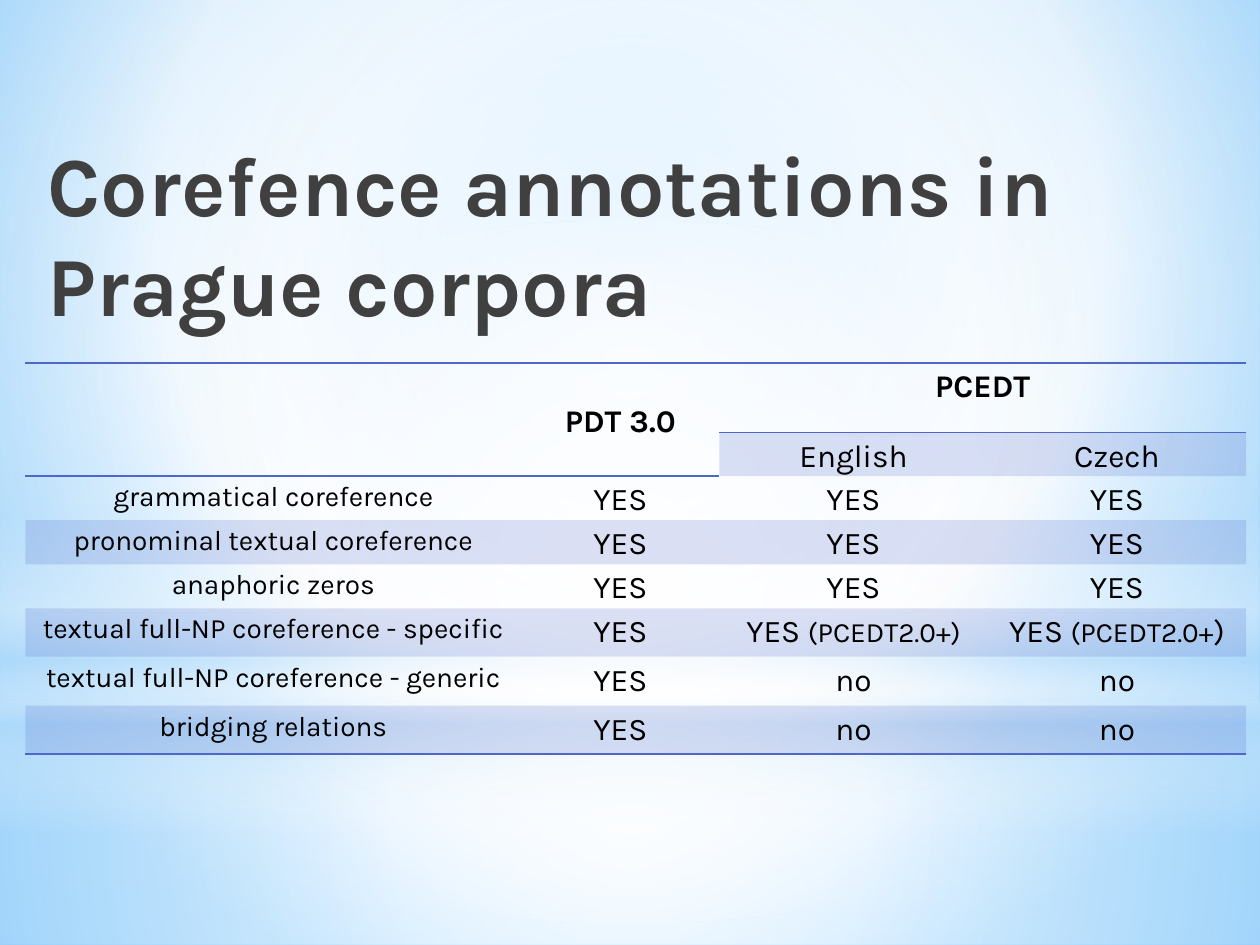
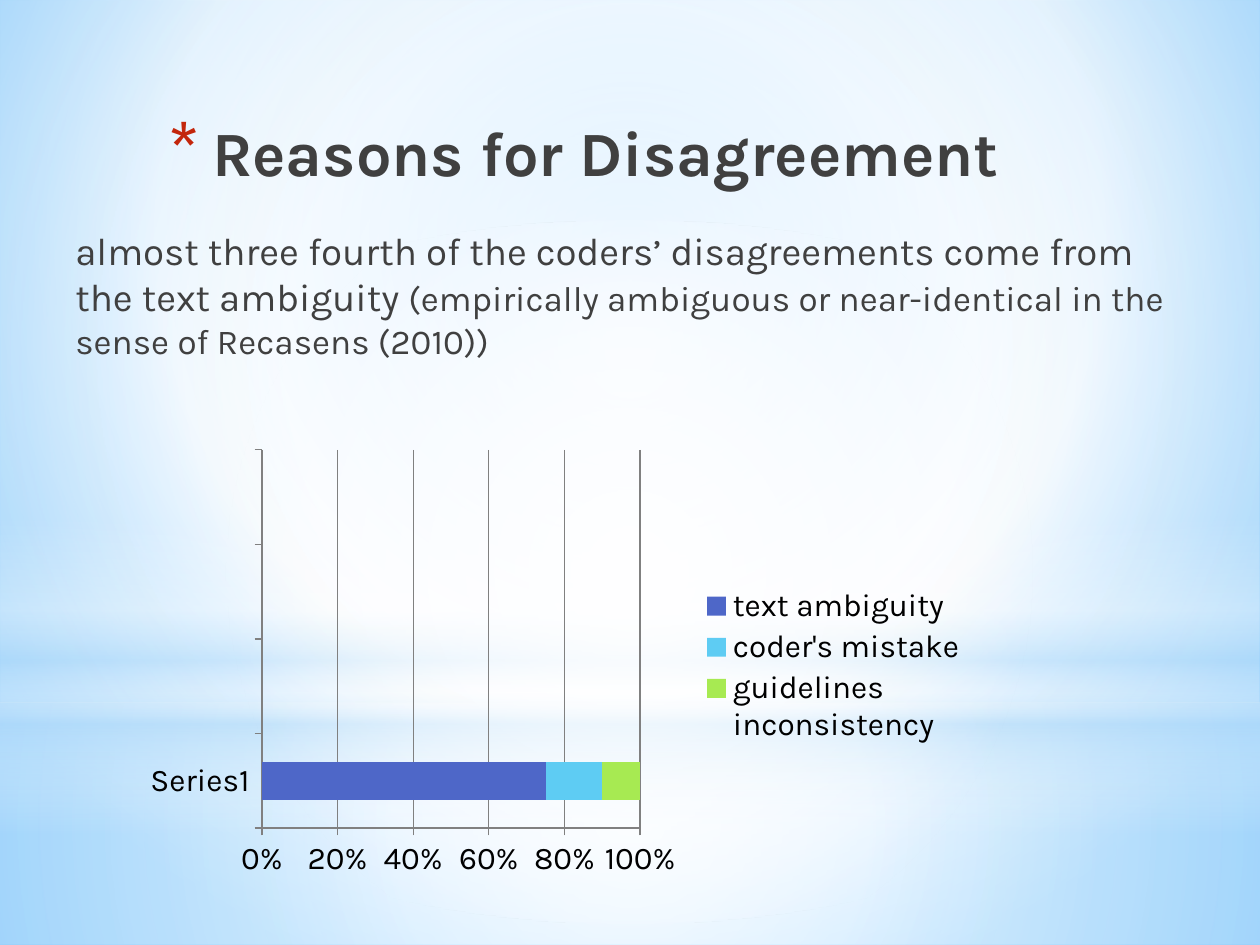
from lxml import etree
from pptx import Presentation
from pptx.chart.data import CategoryChartData
from pptx.dml.color import RGBColor
from pptx.enum.chart import XL_CHART_TYPE as ChartType, XL_LEGEND_POSITION as LegendPos, XL_TICK_MARK as Tick
from pptx.enum.shapes import MSO_SHAPE as Preset
from pptx.enum.text import MSO_ANCHOR as Anchor, PP_ALIGN as Align
from pptx.oxml import parse_xml
from pptx.oxml.ns import nsdecls, qn
from pptx.util import Cm, Pt

FONT = "Karla"
BLACK = RGBColor(0x00, 0x00, 0x00)
CHARCOAL = RGBColor(0x40, 0x40, 0x40)
GRAY = RGBColor(0x80, 0x80, 0x80)
WHITE = RGBColor(0xFF, 0xFF, 0xFF)
MIST = RGBColor(0xB4, 0xDC, 0xFA)
SKY = RGBColor(0x9E, 0xD5, 0xFF)
AZURE = RGBColor(0x5B, 0xB9, 0xFF)
INDIGO = RGBColor(0x4E, 0x67, 0xC8)
CYAN = RGBColor(0x5E, 0xCC, 0xF3)
LIME = RGBColor(0xA7, 0xEA, 0x52)
RED = RGBColor(0xC3, 0x26, 0x0C)


def write(frame, text, size=18, color=BLACK, bold=False, align=Align.LEFT, spacing=None):
    frame.word_wrap = True
    paragraph = frame.paragraphs[0]
    paragraph.alignment = align
    paragraph.line_spacing = spacing
    for words, points in [(text, size)] if isinstance(text, str) else text:
        run = paragraph.add_run()
        run.text = words
        run.font.name = FONT
        run.font.size = Pt(points)
        run.font.bold = bold
        run.font.color.rgb = color
    return paragraph


def paint_gradient(owner, fill, stops, focus=None):
    fill.solid()
    fill.fore_color.rgb = WHITE
    solid = next(owner.element.iter(qn("a:solidFill")))
    marks = "".join(
        f'<a:gs pos="{pos * 1000}"><a:srgbClr val="{color}"><a:alpha val="{alpha * 1000}"/></a:srgbClr></a:gs>'
        for pos, color, alpha in stops)
    direction = '<a:lin ang="5400000" scaled="0"/>'
    if focus:
        left, top, right, bottom = (side * 1000 for side in focus)
        direction = (f'<a:path path="circle"><a:fillToRect l="{left}" t="{top}" '
                     f'r="{right}" b="{bottom}"/></a:path>')
    gradient = parse_xml(f'<a:gradFill {nsdecls("a")} rotWithShape="1"><a:gsLst>{marks}</a:gsLst>{direction}</a:gradFill>')
    solid.getparent().replace(solid, gradient)


CENTER = (50, 50, 50, 50)
BACKDROP = [(0, SKY, 100), (60, WHITE, 100), (100, AZURE, 100)]
GLOWS = [
    (Preset.RECTANGLE, 14.17, 4.88, [(0, WHITE, 91), (37, WHITE, 76), (100, MIST, 79)], CENTER),
    (Preset.RECTANGLE, 0, 14.17, [(0, WHITE, 89), (48, WHITE, 62), (100, MIST, 79)], CENTER),
    (Preset.RECTANGLE, 10.46, 6.35, [(0, WHITE, 0), (29, WHITE, 30), (45, MIST, 40),
                                     (55, WHITE, 26), (65, MIST, 60), (100, WHITE, 0)], None),
    (Preset.OVAL, 4.45, 14.17, [(0, WHITE, 100), (56, WHITE, 0)], CENTER),
]
TITLES = [
    ("Corefence annotations in Prague corpora", 48, Align.LEFT, (0.71, 2.54, 22, 3.18)),
    ("Reasons for Disagreement", 36, Align.RIGHT, (2.31, 2.16, 18.08, 3.18)),
]

deck = Presentation()
deck.slide_width, deck.slide_height = Cm(25.4), Cm(19.05)
slides = []
headings = []
for words, size, align, place in TITLES:
    slide = deck.slides.add_slide(deck.slide_layouts[6])
    paint_gradient(slide, slide.background.fill, BACKDROP, (20, 10, 20, 60))
    for preset, top, height, stops, focus in GLOWS:
        glow = slide.shapes.add_shape(preset, 0, Cm(top), deck.slide_width, Cm(height))
        glow.shadow.inherit = False
        glow.line.fill.background()
        paint_gradient(glow, glow.fill, stops, focus)
    title = slide.shapes.add_textbox(*map(Cm, place))
    headings.append(write(title.text_frame, words, size=size, color=CHARCOAL, bold=True, align=align))
    slides.append(slide)
corpora_slide, reasons_slide = slides

YES, NO = "YES", "no"
ROWS = [
    ("", "PDT 3.0", "PCEDT", ""),
    ("", "", "English", "Czech"),
    ("grammatical coreference", YES, YES, YES),
    ("pronominal textual coreference", YES, YES, YES),
    ("anaphoric zeros", YES, YES, YES),
    ("textual full-NP coreference - specific", YES,
     [("YES ", 18), ("(PCEDT2.0+)", 16)], [("YES ", 18), ("(PCEDT2.0+", 16), (")", 18)]),
    ("textual full-NP coreference - generic", YES, NO, NO),
    ("bridging relations", YES, NO, NO),
]
COLUMN_WIDTHS = [10, 3.99, 5.41, 5.21]
ROW_HEIGHTS = [1.4, 0.86, 0.89, 0.89, 0.89, 0.97, 0.99, 0.97]
LAST = len(ROWS) - 1

annotations = corpora_slide.shapes.add_table(
    len(ROWS), len(COLUMN_WIDTHS), Cm(0.51), Cm(7.32), Cm(sum(COLUMN_WIDTHS)), Cm(sum(ROW_HEIGHTS)))
grid = annotations.table
grid.first_row = grid.horz_banding = False
next(annotations.element.iter(qn("a:tableStyleId"))).text = "{2D5ABB26-0587-4C30-8999-92F81FD0307C}"
for column, width in zip(grid.columns, COLUMN_WIDTHS):
    column.width = Cm(width)
for row, height in zip(grid.rows, ROW_HEIGHTS):
    row.height = Cm(height)
for first, last in [((0, 0), (1, 0)), ((0, 1), (1, 1)), ((0, 2), (0, 3))]:
    grid.cell(*first).merge(grid.cell(*last))

for r, entries in enumerate(ROWS):
    for c, entry in enumerate(entries):
        cell = grid.cell(r, c)
        cell.margin_left = cell.margin_right = Cm(0.18)
        cell.margin_top = cell.margin_bottom = 0
        if r == 1 or (r, c) == (0, 1):
            cell.vertical_anchor = Anchor.MIDDLE
        if entry:
            write(cell.text_frame, entry, size=16 if c == 0 else 18, bold=r == 0,
                  align=Align.CENTER, spacing=1.15)
        if r % 2 and (r > 1 or c > 1):
            cell.fill.solid()
            cell.fill.fore_color.rgb = INDIGO
            tint = next(cell._tc.iter(qn("a:srgbClr")), None)
            for shade in cell._tc.tcPr.iter(qn("a:srgbClr")):
                if shade.getparent().getparent() is cell._tc.tcPr:
                    etree.SubElement(shade, qn("a:alpha"), val="20000")
        else:
            cell.fill.background()
        edges = []
        if r == 0:
            edges.append("lnT")
        if r in (0, LAST) or (r == 1 and c < 2):
            edges.append("lnB")
        for position, edge in enumerate(edges):
            cell._tc.tcPr.insert(position, parse_xml(
                f'<a:{edge} {nsdecls("a")} w="12700"><a:solidFill><a:srgbClr val="{INDIGO}"/></a:solidFill></a:{edge}>'))

bulleted = headings[1]._p.get_or_add_pPr()
bulleted.set("marL", str(Cm(0.89)))
bulleted.set("indent", str(-Cm(0.89)))
for bullet_part in [f'<a:buClr {nsdecls("a")}><a:srgbClr val="{RED}"/></a:buClr>',
                    f'<a:buSzPct {nsdecls("a")} val="128000"/>',
                    f'<a:buFont {nsdecls("a")} typeface="{FONT}"/>',
                    f'<a:buChar {nsdecls("a")} char="*"/>']:
    bulleted.append(parse_xml(bullet_part))

finding = reasons_slide.shapes.add_textbox(Cm(1.27), Cm(4.45), Cm(22.86), Cm(3.28))
write(finding.text_frame, [
    ("almost three fourth of the coders’ disagreements come from the text ambiguity ", 22),
    ("(empirically ambiguous or near-identical in the sense of Recasens (2010))", 20),
], color=CHARCOAL)

REASONS = [("text ambiguity", 75, INDIGO), ("coder's mistake", 15, CYAN), ("guidelines inconsistency", 10, LIME)]
shares = CategoryChartData()
shares.categories = ["Series1", "", "", ""]
for reason, share, color in REASONS:
    shares.add_series(reason, [share, None, None, None])
chart = reasons_slide.shapes.add_chart(
    ChartType.BAR_STACKED_100, Cm(2.74), Cm(8.89), Cm(16.94), Cm(8.97), shares).chart
chart.has_title = False
chart.font.name = FONT
chart.font.size = Pt(18)
chart.font.color.rgb = BLACK
bars = chart.plots[0]
bars.vary_by_categories = False
bars.gap_width = 150
bars.overlap = 100
for series, (reason, share, color) in zip(bars.series, REASONS):
    series.format.fill.solid()
    series.format.fill.fore_color.rgb = color
for axis in (chart.category_axis, chart.value_axis):
    axis.major_tick_mark = Tick.OUTSIDE
    axis.minor_tick_mark = Tick.NONE
    axis.format.line.color.rgb = GRAY
    axis.format.line.width = Pt(0.75)
chart.category_axis.has_major_gridlines = False
percent = chart.value_axis
percent.has_major_gridlines = True
percent.major_gridlines.format.line.color.rgb = GRAY
percent.major_gridlines.format.line.width = Pt(0.75)
percent.minimum_scale, percent.maximum_scale, percent.major_unit = 0, 1, 0.2
percent.tick_labels.number_format = "0%"
percent.tick_labels.number_format_is_linked = False
chart.has_legend = True
chart.legend.position = LegendPos.RIGHT
chart.legend.include_in_layout = False

chart_space = chart.element
for part, slot, target, (x, y, w, h) in [
        ("c:plotArea", 0, '<c:layoutTarget val="inner"/>', (0.15, 0.02, 0.45, 0.85)),
        ("c:legend", 1, "", (0.67, 0.32, 0.32, 0.37))]:
    holder = next(chart_space.iter(qn(part)))
    for automatic in holder.findall(qn("c:layout")):
        holder.remove(automatic)
    holder.insert(slot, parse_xml(
        f'<c:layout {nsdecls("c")}><c:manualLayout>{target}<c:xMode val="edge"/><c:yMode val="edge"/>'
        f'<c:x val="{x}"/><c:y val="{y}"/><c:w val="{w}"/><c:h val="{h}"/></c:manualLayout></c:layout>'))

deck.save("out.pptx")
